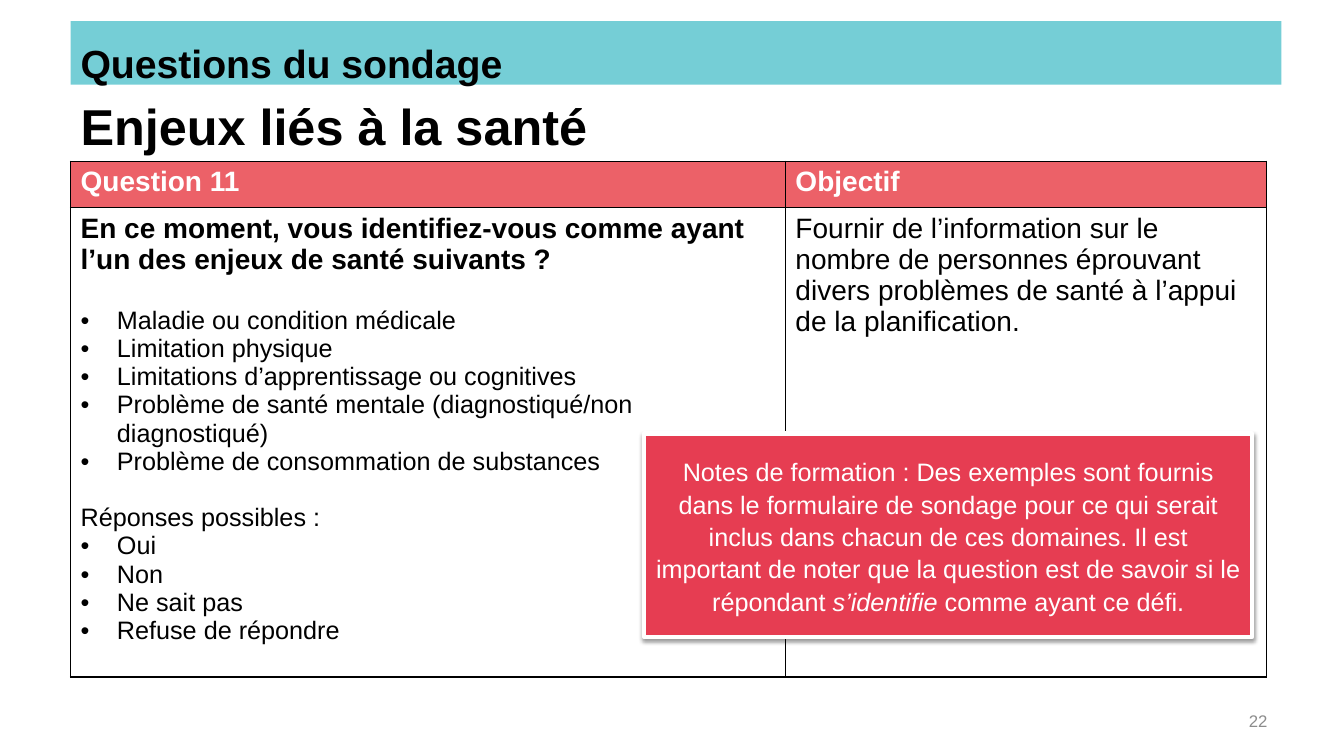
from lxml.etree import SubElement
from pptx import Presentation
from pptx.dml.color import RGBColor
from pptx.enum.shapes import MSO_SHAPE
from pptx.enum.text import MSO_ANCHOR, PP_ALIGN
from pptx.oxml import parse_xml
from pptx.oxml.ns import nsdecls, qn
from pptx.util import Inches, Pt

BLACK = RGBColor(0x00, 0x00, 0x00)
WHITE = RGBColor(0xFF, 0xFF, 0xFF)
GREY = RGBColor(0x8C, 0x8C, 0x8C)
TEAL = RGBColor(0x75, 0xCE, 0xD6)
CORAL = RGBColor(0xEC, 0x61, 0x68)
RED = RGBColor(0xE6, 0x3D, 0x52)

ISSUES = [
    "Maladie ou condition médicale",
    "Limitation physique",
    "Limitations d’apprentissage ou cognitives",
    "Problème de santé mentale (diagnostiqué/non diagnostiqué)",
    "Problème de consommation de substances",
]
ANSWERS = ["Oui", "Non", "Ne sait pas", "Refuse de répondre"]


class Page:
    font = "Arial"

    def __init__(self, slide):
        self.slide = slide

    def style(self, para, size, color=BLACK, bold=False, align=PP_ALIGN.LEFT):
        para.alignment = align
        for run in para.runs:
            font = run.font
            font.name, font.size, font.bold = self.font, Pt(size), bold
            font.color.rgb = color

    def text(self, words, box, size, **look):
        frame = self.slide.shapes.add_textbox(*map(Inches, box)).text_frame
        frame.word_wrap = True
        frame.vertical_anchor = MSO_ANCHOR.MIDDLE
        frame.text = words
        self.style(frame.paragraphs[0], size, **look)

    def rect(self, box, fill, anchor):
        shape = self.slide.shapes.add_shape(MSO_SHAPE.RECTANGLE, *map(Inches, box))
        shape.shadow.inherit = False
        shape.fill.solid()
        shape.fill.fore_color.rgb = fill
        shape.line.fill.background()
        shape.text_frame.word_wrap = True
        shape.text_frame.vertical_anchor = anchor
        return shape

    def shade(self, shape):
        effects = shape._element.spPr.find(qn("a:effectLst"))
        effects.append(parse_xml(
            f'<a:outerShdw {nsdecls("a")} blurRad="{Pt(3.1)}" dist="{Pt(1.6)}" '
            'dir="5400000" rotWithShape="0"><a:srgbClr val="000000">'
            '<a:alpha val="38000"/></a:srgbClr></a:outerShdw>'))

    def table(self, box, cols, rows):
        table = self.slide.shapes.add_table(
            len(rows), len(cols), *map(Inches, box)).table
        for col, width in zip(table.columns, cols):
            col.width = Inches(width)
        for row, height in zip(table.rows, rows):
            row.height = Inches(height)
        return table

    def cell(self, cell, fill, items):
        """Each item: words, size, colour, bold, bullet, space before."""
        frame = cell.text_frame
        frame.text = "\n".join(item[0] for item in items)
        for para, (_, size, color, bold, bullet, gap) in zip(frame.paragraphs, items):
            if bullet:
                self.bullet(para)
            if gap:
                para.space_before = Pt(gap)
            self.style(para, size, color, bold)
        # Borders come before the fill
        props = cell._tc.get_or_add_tcPr()
        for side in ("lnL", "lnR", "lnT", "lnB"):
            line = SubElement(props, qn(f"a:{side}"), w=str(Pt(1)))
            SubElement(SubElement(line, qn("a:solidFill")), qn("a:srgbClr"), val=str(BLACK))
        if fill:
            cell.fill.solid()
            cell.fill.fore_color.rgb = fill
        else:
            cell.fill.background()

    def bullet(self, para):
        props = para._p.get_or_add_pPr()
        indent = Inches(0.36)
        props.set("marL", str(indent))
        props.set("indent", str(-indent))
        SubElement(props, qn("a:buFont"), typeface=self.font)
        SubElement(props, qn("a:buChar"), char="•")


def main():
    deck = Presentation()
    deck.slide_width, deck.slide_height = Inches(13.33), Inches(7.5)
    page = Page(deck.slides.add_slide(deck.slide_layouts[6]))

    # Title and banner
    page.text("Enjeux liés à la santé", (0.7, 0.86, 8.88, 0.77), 36, bold=True)
    banner = page.rect((0.7, 0.21, 12.01, 0.63), TEAL, MSO_ANCHOR.TOP)
    banner.text_frame.text = "Questions du sondage"
    head = banner.text_frame.paragraphs[0]
    head.line_spacing = Pt(43.2)
    page.style(head, 28, bold=True)

    # Question table
    table = page.table((0.7, 1.6, 11.86, 4.84), (7.09, 4.77), (0.46, 4.38))
    for col, label in enumerate(("Question 11", "Objectif")):
        page.cell(table.cell(0, col), CORAL, [(label, 20, WHITE, True, False, 0)])
    ask = ("En ce moment, vous identifiez-vous comme ayant "
           "l’un des enjeux de santé suivants ?")
    items = [(ask, 20, BLACK, True, False, 0)]
    items += [(issue, 18, BLACK, False, True, 0 if i else 22.3)
              for i, issue in enumerate(ISSUES)]
    items.append(("Réponses possibles :", 18, BLACK, False, False, 20.1))
    items += [(answer, 18, BLACK, False, True, 0) for answer in ANSWERS]
    page.cell(table.cell(1, 0), None, items)
    goal = ("Fournir de l’information sur le nombre de personnes éprouvant "
            "divers problèmes de santé à l’appui de la planification.")
    page.cell(table.cell(1, 1), None, [(goal, 20, BLACK, False, False, 0)])

    # Training note
    note = page.rect((6.39, 4.3, 6.03, 2.02), RED, MSO_ANCHOR.MIDDLE)
    note.line.color.rgb = WHITE
    note.line.width = Pt(3)
    page.shade(note)
    para = note.text_frame.paragraphs[0]
    para.line_spacing = 1.07
    for words in (
        "Notes de formation : Des exemples sont fournis dans le formulaire de "
        "sondage pour ce qui serait inclus dans chacun de ces domaines. Il est "
        "important de noter que la question est de savoir si le répondant ",
        "s’identifie",
        " comme ayant ce défi.",
    ):
        para.add_run().text = words
    page.style(para, 18, WHITE, align=PP_ALIGN.CENTER)
    para.runs[1].font.italic = True

    # Page number
    page.text("22", (9.56, 6.95, 3.11, 0.4), 12, color=GREY, align=PP_ALIGN.RIGHT)

    deck.save("out.pptx")


if __name__ == "__main__":
    main()
